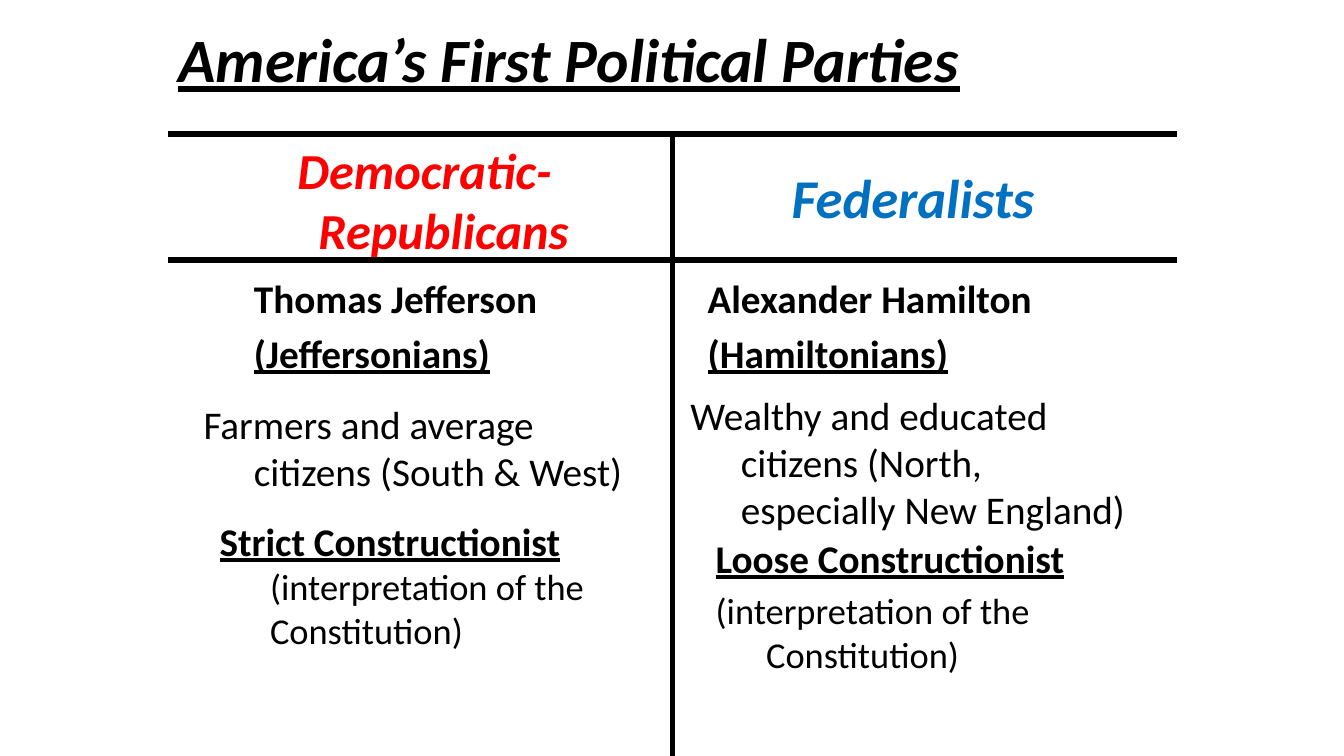
from dataclasses import dataclass

from lxml import etree
from pptx import Presentation
from pptx import util as u
from pptx.dml.color import RGBColor
from pptx.enum import shapes, text
from pptx.oxml import ns


@dataclass(frozen=True)
class Theme:
    font: str = "Calibri"
    ink: str = "000000"
    red: str = "FF0000"
    blue: str = "0070C0"
    title: int = 44
    party: int = 36
    large: int = 39
    body: int = 28
    note: int = 26
    rule: int = 4


class Page:
    """Holds the style and the current slide."""

    def __init__(self, deck, theme):
        self.theme = theme
        self.slide = deck.slides.add_slide(deck.slide_layouts[6])

    def label(self, box, paras, hang=0.5, align=None, **frame):
        """Add a text box; each paragraph is a list of (words, format) runs."""
        body = self.slide.shapes.add_textbox(*map(u.Inches, box)).text_frame
        for key, val in {"word_wrap": True, **frame}.items():
            setattr(body, key, val)
        for i, runs in enumerate(paras):
            para = body.add_paragraph() if i else body.paragraphs[0]
            para.alignment = align
            if hang:
                self.indent(para, hang)
            else:
                para.line_spacing = 0.9
            for words, form in runs:
                self.run(para, words, **form)

    def indent(self, para, hang):
        """Set a hanging indent and 20 % space before."""
        props = para._p.get_or_add_pPr()
        props.set("marL", str(u.Inches(hang)))
        props.set("indent", str(-u.Inches(hang)))
        space = etree.SubElement(props, ns.qn("a:spcBef"))
        etree.SubElement(space, ns.qn("a:spcPct")).set("val", "20000")

    def run(self, para, words, size, color=None, **form):
        run = para.add_run()
        run.text = words
        form = {"name": self.theme.font, "size": u.Pt(size), **form}
        for key, val in form.items():
            setattr(run.font, key, val)
        run.font.color.rgb = RGBColor.from_string(color or self.theme.ink)

    def rule(self, *ends):
        line = self.slide.shapes.add_connector(
            shapes.MSO_CONNECTOR.STRAIGHT, *map(u.Inches, ends))
        line.line.width = u.Pt(self.theme.rule)
        line.line.color.rgb = RGBColor.from_string(self.theme.ink)
        etree.SubElement(line._element.spPr, ns.qn("a:effectLst"))


def main():
    deck = Presentation()
    deck.slide_width, deck.slide_height = u.Inches(13.33), u.Inches(7.5)
    look = Theme()
    page = Page(deck, look)

    # Run formats
    plain = {"size": look.body}
    bold = {**plain, "bold": True}
    key = {**bold, "underline": True}
    note = {"size": look.note}
    head = {"bold": True, "italic": True}
    gloss = ("(interpretation of the Constitution)", note)

    # Title
    page.label((1.67, 0, 10, 1.25),
               [[("America’s First Political Parties",
                  {**head, "size": look.title, "underline": True})]],
               hang=0, vertical_anchor=text.MSO_ANCHOR.MIDDLE)

    # Party names
    for box, name, size, color in (
            ((2.17, 1.33, 4.08, 1.25), "Democratic-Republicans",
             look.party, look.red),
            ((7.08, 1.58, 3.95, 1.21), "Federalists", look.large, look.blue)):
        page.label(box, [[(name, {**head, "size": size, "color": color})]],
                   hang=0.38, align=text.PP_ALIGN.CENTER)

    # Leaders
    for box, name, group in (
            ((2.42, 2.67, 4.08, 1.17), "Thomas Jefferson", "(Jeffersonians)"),
            ((6.92, 2.67, 4.08, 1.25), "Alexander Hamilton",
             "(Hamiltonians)")):
        page.label(box, [[(name, bold)], [(group, key)]])

    # Supporters
    for box, words in (
            ((1.92, 3.92, 4.49, 1.04),
             "Farmers and average citizens (South & West)"),
            ((6.75, 3.83, 4.67, 1.67),
             "Wealthy and educated citizens (North, especially New England)")):
        page.label(box, [[(words, plain)]])

    # Views of the Constitution
    page.label((2.08, 5.08, 4.16, 1.04),
               [[("Strict Constructionist ", key), gloss]])
    page.label((7, 5.25, 4.08, 1.17),
               [[("Loose Constructionist", key)], [gloss]])

    # Chart lines
    for y in (1.33, 2.58):
        page.rule(1.67, y, 11.67, y)
    page.rule(6.67, 1.33, 6.67, 7.5)

    deck.save("out.pptx")


if __name__ == "__main__":
    main()
